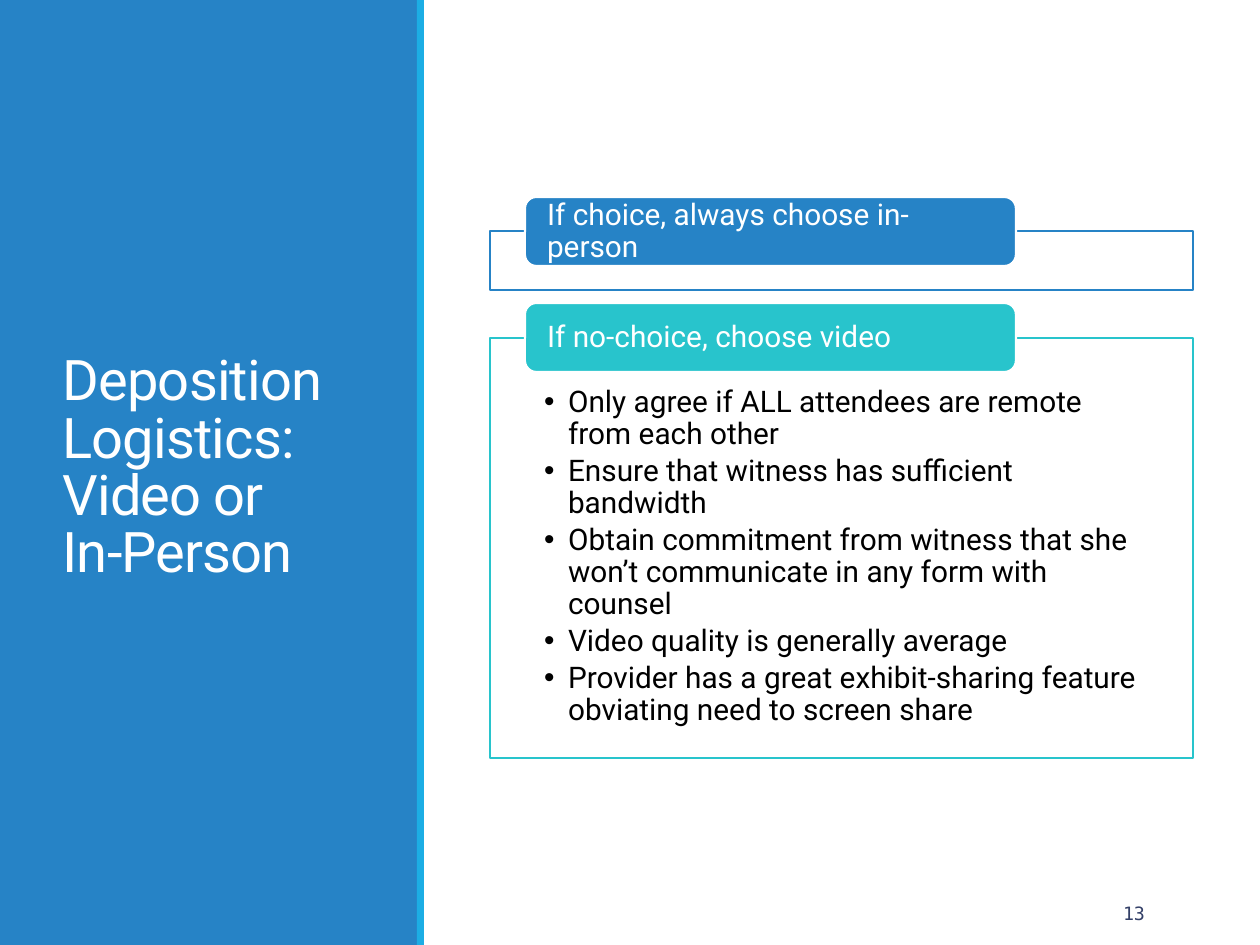
from pptx import Presentation, util as u
from pptx.dml import color
from pptx.enum import shapes, text

SCALE = 914400 / 126


def px(*lengths):
    return [u.Emu(round(n * SCALE)) for n in lengths]


def rgb(value):
    return color.RGBColor.from_string(value)


deck = Presentation()
deck.slide_width, deck.slide_height = px(1260, 945)
page = deck.slides.add_slide(deck.slide_layouts[1])
title, body = page.placeholders

KINDS = shapes.MSO_SHAPE
blocks = [
    (KINDS.RECTANGLE, (0, 0, 418, 945), "2683C6", None),
    (KINDS.RECTANGLE, (417, 0, 7, 945), "1CADE4", None),
    (KINDS.RECTANGLE, (490, 231, 703, 59), "FFFFFF", "2683C6"),
    (KINDS.RECTANGLE, (490, 338, 703, 420), "FFFFFF", "28C4CC"),
    (KINDS.ROUNDED_RECTANGLE, (525, 197, 491, 69), "2683C6", "FFFFFF"),
    (KINDS.ROUNDED_RECTANGLE, (525, 303, 491, 69), "28C4CC", "FFFFFF"),
]
for kind, place, fill, line in blocks:
    box = page.shapes.add_shape(kind, *px(*place))
    box.shadow.inherit = False
    box.fill.solid()
    box.fill.fore_color.rgb = rgb(fill)
    if line:
        box.line.color.rgb = rgb(line)
        box.line.width = u.Pt(1.25)
    else:
        box.line.fill.background()
    title.element.addprevious(box.element)

title.left, title.top, title.width, title.height = px(50, 72, 319, 795)
frame = title.text_frame
frame.auto_size = text.MSO_AUTO_SIZE.NONE
frame.vertical_anchor = text.MSO_ANCHOR.MIDDLE
para = frame.paragraphs[0]
para.alignment = text.PP_ALIGN.LEFT
para.line_spacing = 0.85
for number, words in enumerate(["Deposition Logistics: Video or ", "In-Person"]):
    if number:
        para.add_line_break()
    span = para.add_run()
    span.text = words
    span.font.name = "Roboto"
    span.font.size = u.Pt(32)
    span.font.color.rgb = rgb("FFFFFF")
    span.font._element.set("spc", "-50")

body.left, body.top, body.width, body.height = px(490, 338, 703, 420)
frame = body.text_frame
frame.auto_size = text.MSO_AUTO_SIZE.NONE
frame.margin_left, frame.margin_top, frame.margin_right, frame.margin_bottom = px(54, 49, 54, 16)
points = [
    "Only agree if ALL attendees are remote from each other",
    "Ensure that witness has sufficient bandwidth",
    "Obtain commitment from witness that she won’t communicate in any form with counsel",
    "Video quality is generally average",
    "Provider has a great exhibit-sharing feature obviating need to screen share",
]
for number, words in enumerate(points):
    para = frame.add_paragraph() if number else frame.paragraphs[0]
    para.line_spacing = 0.9
    para.space_before = u.Pt(0)
    para.space_after = u.Pt(2.6)
    indent = px(24)[0]
    props = para._p.get_or_add_pPr()
    props.set("marL", str(indent))
    props.set("indent", str(-indent))
    span = para.add_run()
    span.text = words
    span.font.name = "Roboto"
    span.font.size = u.Pt(17)
    span.font.color.rgb = rgb("000000")

LEFT, RIGHT = text.PP_ALIGN.LEFT, text.PP_ALIGN.RIGHT
labels = [
    ("If choice, always choose in-person", (528, 200, 485, 63), 19, 0, LEFT, "Roboto", 17, "FFFFFF"),
    ("If no-choice, choose video", (528, 306, 485, 63), 19, 0, LEFT, "Roboto", 17, "FFFFFF"),
    ("13", (1046, 890, 112, 50), 13, 6, RIGHT, "DejaVu Sans Mono", 10.5, "344068"),
]
for words, place, side, edge, align, font, size, ink in labels:
    box = page.shapes.add_textbox(*px(*place))
    frame = box.text_frame
    frame.word_wrap = True
    frame.vertical_anchor = text.MSO_ANCHOR.MIDDLE
    frame.margin_left, frame.margin_right, frame.margin_top, frame.margin_bottom = px(side, side, edge, edge)
    para = frame.paragraphs[0]
    para.alignment = align
    para.line_spacing = 0.9
    span = para.add_run()
    span.text = words
    span.font.name = font
    span.font.size = u.Pt(size)
    span.font.color.rgb = rgb(ink)

deck.save("out.pptx")
